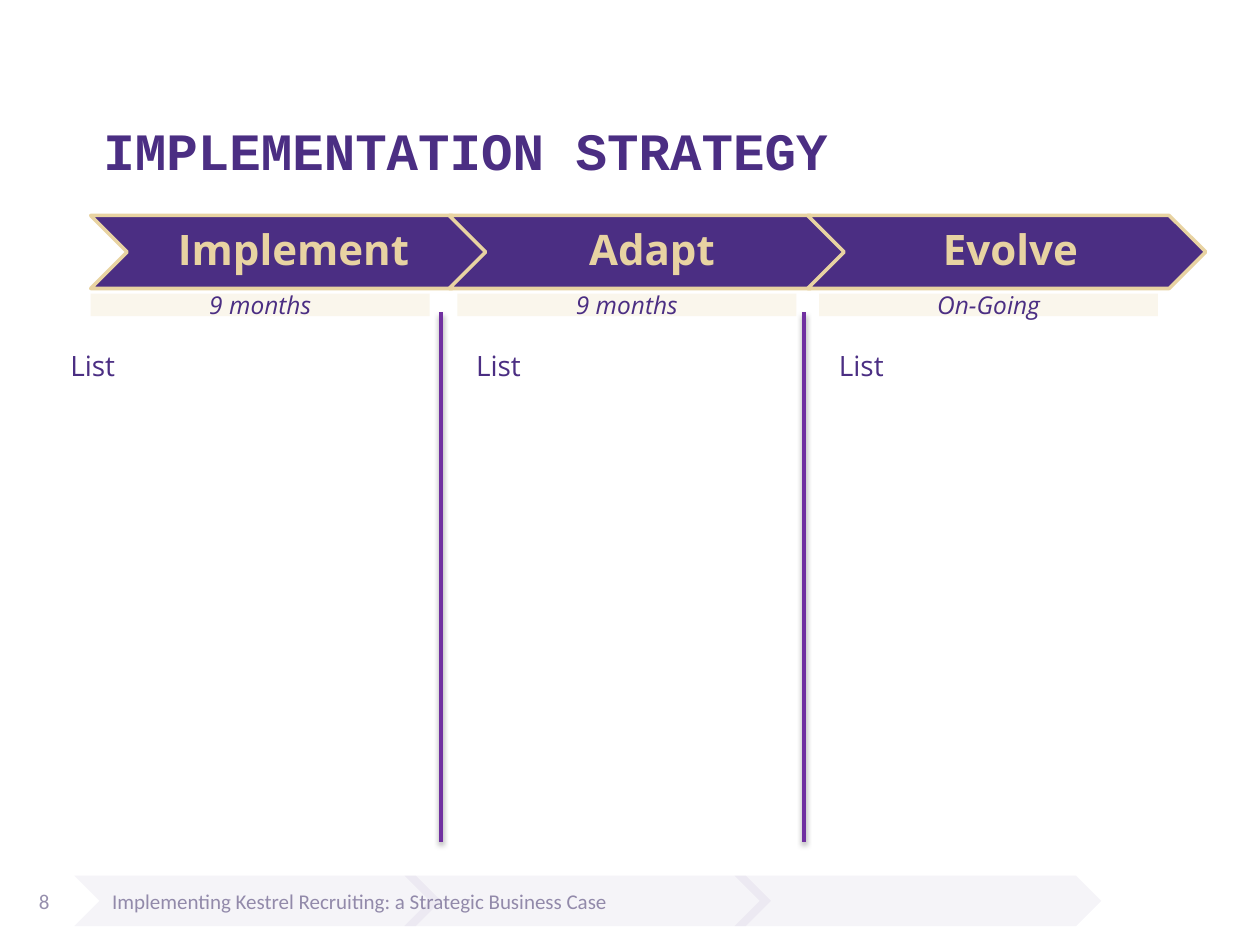
from lxml import etree
from pptx import Presentation
from pptx.dml.color import RGBColor
from pptx.enum.shapes import MSO_CONNECTOR, MSO_SHAPE
from pptx.enum.text import MSO_ANCHOR, PP_ALIGN
from pptx.oxml import parse_xml
from pptx.oxml.ns import nsdecls, qn
from pptx.util import Inches, Pt

PURPLE = RGBColor(0x4B, 0x2E, 0x83)
GOLD = RGBColor(0xE8, 0xD3, 0xA2)
CREAM = RGBColor(0xFA, 0xF6, 0xEC)
VIOLET = RGBColor(0x70, 0x30, 0xA0)
FOOTER_GREY = RGBColor(0x96, 0x8F, 0xAD)

TITLE_FONT, BODY_FONT, FOOTER_FONT = "Courier New", "Open Sans", "Calibri"
CHEVRON, RECTANGLE = MSO_SHAPE.CHEVRON, MSO_SHAPE.RECTANGLE
STRAIGHT = MSO_CONNECTOR.STRAIGHT
TOP, MIDDLE, BOTTOM = MSO_ANCHOR.TOP, MSO_ANCHOR.MIDDLE, MSO_ANCHOR.BOTTOM
LEFT, CENTER = PP_ALIGN.LEFT, PP_ALIGN.CENTER

# name, duration, duration left, list left, list width
PHASES = [
    ("Implement", "9 months", 0.72, 0.46, 3.03),
    ("Adapt", "9 months", 3.63, 3.68, 2.69),
    ("Evolve", "On-Going", 6.5, 6.56, 3.33),
]
DIVIDERS = [3.5, 6.38]

SHADOW = (
    f'<a:effectLst {nsdecls("a")}><a:outerShdw blurRad="{Pt(3.1)}" dist="{Pt(1.6)}" '
    'dir="5400000" rotWithShape="0"><a:srgbClr val="000000"><a:alpha val="38000"/>'
    "</a:srgbClr></a:outerShdw></a:effectLst>"
)


class StrategySlide:
    def __init__(self, presentation):
        self.slide = presentation.slides.add_slide(presentation.slide_layouts[5])

    def set_text(self, shape, text, size, color, font=BODY_FONT, align=LEFT,
                 anchor=MIDDLE, bold=False, italic=False):
        frame = shape.text_frame
        frame.word_wrap = True
        frame.vertical_anchor = anchor
        frame.text = text
        paragraph = frame.paragraphs[0]
        paragraph.alignment = align
        run_font = paragraph.runs[0].font
        run_font.name, run_font.size = font, Pt(size)
        run_font.bold, run_font.italic = bold, italic
        run_font.color.rgb = color
        return paragraph

    def title(self, text, *box):
        shape = self.slide.shapes.title
        shape.left, shape.top, shape.width, shape.height = map(Inches, box)
        self.set_text(shape, text, 30, PURPLE, TITLE_FONT, anchor=BOTTOM, bold=True)

    def text(self, text, box, size, color, **style):
        shape = self.slide.shapes.add_textbox(*map(Inches, box))
        return shape, self.set_text(shape, text, size, color, **style)

    def shape(self, kind, box, fill, line=None, opacity=None):
        shape = self.slide.shapes.add_shape(kind, *map(Inches, box))
        shape.shadow.inherit = False
        shape.fill.solid()
        shape.fill.fore_color.rgb = fill
        if opacity is not None:
            color = shape._element.spPr.find(qn("a:solidFill")).find(qn("a:srgbClr"))
            etree.SubElement(color, qn("a:alpha"), val=str(opacity * 1000))
        if line is None:
            shape.line.fill.background()
        else:
            shape.line.color.rgb = line
            shape.line.width = Pt(2)
        return shape

    def phase_label(self, text, box):
        shape, paragraph = self.text(text, box, 24, GOLD, align=CENTER, bold=True)
        frame = shape.text_frame
        frame.margin_left = Inches(0.1)
        frame.margin_right = frame.margin_top = frame.margin_bottom = Inches(0.04)
        paragraph.line_spacing = 0.9

    def bullet_list(self, text, box):
        shape = self.slide.shapes.add_textbox(*map(Inches, box))
        properties = shape.text_frame.paragraphs[0]._p.get_or_add_pPr()
        properties.set("marL", str(Inches(0.38)))
        properties.set("indent", str(-Inches(0.38)))
        etree.SubElement(properties, qn("a:buChar"), char=">")
        self.set_text(shape, text, 16, PURPLE, anchor=TOP)

    def divider(self, x, top, bottom):
        line = self.slide.shapes.add_connector(
            STRAIGHT, Inches(x), Inches(top), Inches(x), Inches(bottom))
        line.line.color.rgb = VIOLET
        line.line.width = Pt(2)
        line._element.spPr.append(parse_xml(SHADOW))


def main():
    presentation = Presentation()
    presentation.slide_width, presentation.slide_height = Inches(10), Inches(7.5)
    page = StrategySlide(presentation)
    page.title("IMPLEMENTATION STRATEGY", 0.72, 0.41, 8.96, 1.08)

    # Footer text and page number
    page.text("Implementing Kestrel Recruiting: a Strategic Business Case",
              (0.65, 6.95, 4.41, 0.4), 12, FOOTER_GREY, font=FOOTER_FONT, align=CENTER)
    page.text("8", (0.21, 6.95, 0.44, 0.4), 12, FOOTER_GREY, font=FOOTER_FONT)

    # Phase chevrons
    for index, (name, *_) in enumerate(PHASES):
        left = 0.72 + index * 2.845
        page.shape(CHEVRON, (left, 1.71, 3.16, 0.58), PURPLE, line=GOLD)
        page.phase_label(name, (left + 0.29, 1.71, 2.58, 0.58))

    # Phase lists and the lines between them
    for _, _, _, left, width in PHASES:
        page.bullet_list("List", (left, 2.72, width, 4.05))
    for x in DIVIDERS:
        page.divider(x, 2.48, 6.68)

    # Faint footer chevrons
    for index in range(len(PHASES)):
        page.shape(CHEVRON, (0.59 + index * 2.62, 6.95, 2.91, 0.4), PURPLE, opacity=5)

    # Phase durations
    for _, duration, left, _, _ in PHASES:
        bar = page.shape(RECTANGLE, (left, 2.33, 2.69, 0.18), CREAM)
        page.set_text(bar, duration, 14, PURPLE, align=CENTER, italic=True)

    presentation.save("out.pptx")


if __name__ == "__main__":
    main()
